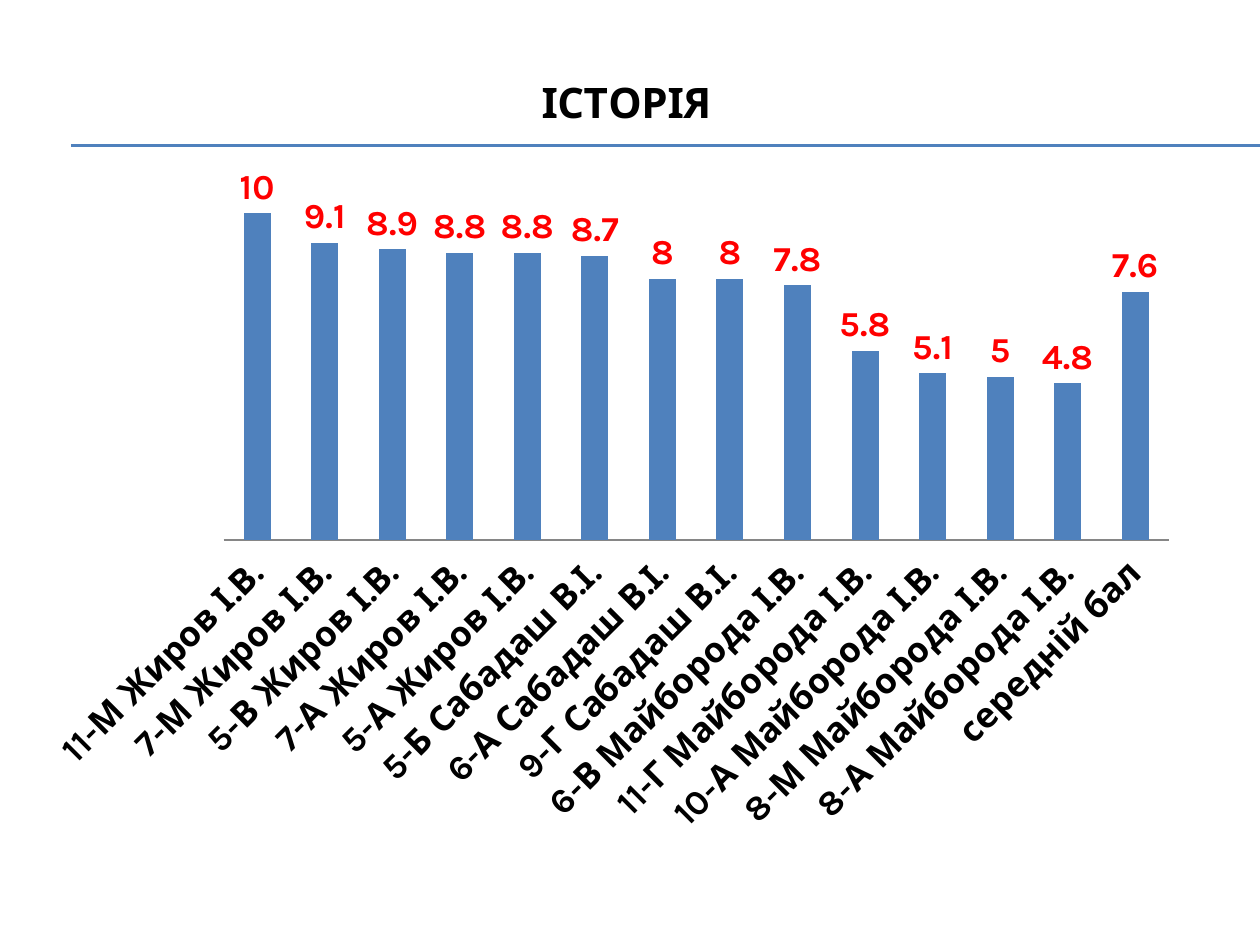
from lxml.etree import SubElement
from pptx import Presentation
from pptx.chart.data import CategoryChartData
from pptx.dml.color import RGBColor
from pptx.enum.chart import XL_CHART_TYPE, XL_LABEL_POSITION, XL_TICK_LABEL_POSITION, XL_TICK_MARK
from pptx.enum.shapes import MSO_CONNECTOR
from pptx.oxml import parse_xml
from pptx.oxml.ns import nsdecls, qn
from pptx.util import Pt

BLUE = RGBColor(0x4F, 0x81, 0xBD)
RED = RGBColor(0xFF, 0x00, 0x00)
BLACK = RGBColor(0x00, 0x00, 0x00)
GREY = RGBColor(0x86, 0x86, 0x86)
FONT = "Karla"

SCORES = [
    ("11-М Жиров І.В.", 10), ("7-М Жиров І.В.", 9.1), ("5-В Жиров І.В.", 8.9),
    ("7-А Жиров І.В.", 8.8), ("5-А Жиров І.В.", 8.8), ("5-Б Сабадаш В.І.", 8.7),
    ("6-А Сабадаш В.І.", 8), ("9-Г Сабадаш В.І.", 8), ("6-В Майборода І.В.", 7.8),
    ("11-Г Майборода І.В.", 5.8), ("10-А Майборода І.В.", 5.1),
    ("8-М Майборода І.В.", 5), ("8-А Майборода І.В.", 4.8), ("середній бал", 7.6),
]


def px(n):
    """Turn pixels at 126 to the inch into EMU."""
    return round(n * 914400 / 126)


def place(parent, index, target="", **fractions):
    """Give a chart part a manual layout, in fractions of the chart."""
    for old in parent.findall(qn("c:layout")):
        parent.remove(old)
    inner = f'<c:layoutTarget val="{target}"/>' if target else ""
    modes = '<c:xMode val="edge"/><c:yMode val="edge"/>'
    values = "".join(f'<c:{k} val="{v}"/>' for k, v in fractions.items())
    parent.insert(index, parse_xml(
        f'<c:layout {nsdecls("c")}><c:manualLayout>{inner}{modes}{values}'
        '</c:manualLayout></c:layout>'))


prs = Presentation()
prs.slide_width, prs.slide_height = px(1260), px(945)
slide = prs.slides.add_slide(prs.slide_layouts[6])

# Double rule under the heading
for y in (145, 146):
    rule = slide.shapes.add_connector(MSO_CONNECTOR.STRAIGHT, px(71), px(y), px(1260), px(y))
    rule.line.color.rgb = BLUE
    rule.line.width = Pt(0.75)
    SubElement(rule._element.spPr, qn("a:effectLst"))

# Column chart of the average scores
data = CategoryChartData()
data.categories = [name for name, score in SCORES]
data.add_series("Series 1", [score for name, score in SCORES])
chart = slide.shapes.add_chart(XL_CHART_TYPE.COLUMN_CLUSTERED,
                               px(34), px(35), px(1163), px(808), data).chart
chart.has_legend = False
chart.font.name = FONT
chart.font.size = Pt(10)
chart.font.color.rgb = BLACK

tf = chart.chart_title.text_frame
r = tf.paragraphs[0].add_run()
r.text = "ІСТОРІЯ"
r.font.name = FONT
r.font.size = Pt(24)
r.font.bold = True
r.font.color.rgb = BLACK
place(chart.chart_title._element, 1, x=0.43, y=0.04)
place(chart._chartSpace.chart.plotArea, 0, "inner", x=0.163, y=0.14, w=0.813, h=0.485)

plot = chart.plots[0]
plot.gap_width = 150
plot.vary_by_categories = False
fill = plot.series[0].format.fill
fill.solid()
fill.fore_color.rgb = BLUE

plot.has_data_labels = True
labels = plot.data_labels
labels.show_value = True
labels.position = XL_LABEL_POSITION.OUTSIDE_END
labels.font.name = FONT
labels.font.size = Pt(20)
labels.font.bold = True
labels.font.color.rgb = RED

names = chart.category_axis
names.major_tick_mark = XL_TICK_MARK.NONE
names.tick_label_position = XL_TICK_LABEL_POSITION.LOW
names.format.line.color.rgb = GREY
names.format.line.width = Pt(0.75)
names.tick_labels.font.name = FONT
names.tick_labels.font.size = Pt(20)
names.tick_labels.font.bold = True
names.tick_labels.font.color.rgb = BLACK
names._element.txPr.bodyPr.set("rot", "-2700000")

scale = chart.value_axis
scale.minimum_scale, scale.maximum_scale = 0, 12
scale.has_major_gridlines = False
scale.visible = False

prs.save("out.pptx")
